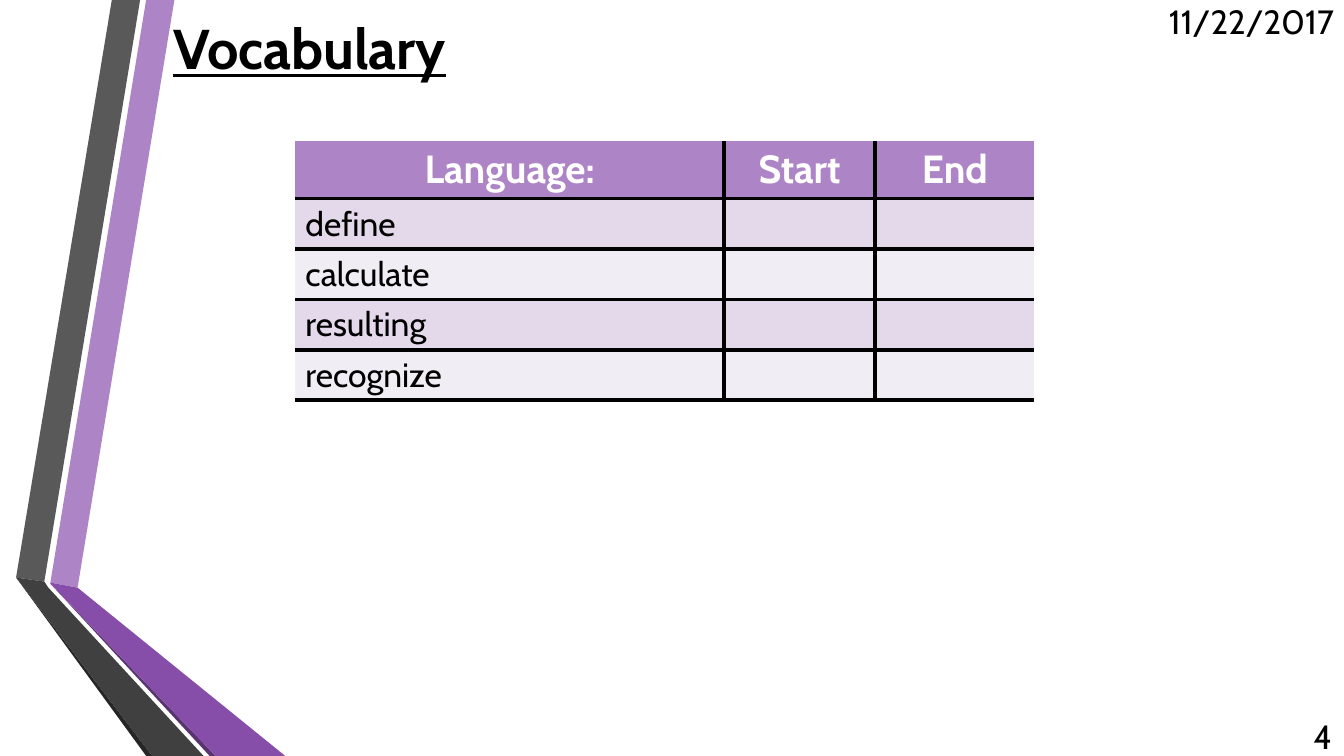
from lxml import etree
from pptx import Presentation
from pptx.dml.color import RGBColor
from pptx.enum.text import MSO_ANCHOR, PP_ALIGN
from pptx.oxml.ns import qn
from pptx.util import Inches, Pt

LEFT, CENTER, RIGHT = PP_ALIGN.LEFT, PP_ALIGN.CENTER, PP_ALIGN.RIGHT
TOP, MIDDLE = MSO_ANCHOR.TOP, MSO_ANCHOR.MIDDLE

BLACK = RGBColor(0x00, 0x00, 0x00)
WHITE = RGBColor(0xFF, 0xFF, 0xFF)
LILAC = RGBColor(0xAD, 0x84, 0xC6)
PURPLE = RGBColor(0x87, 0x4E, 0xA9)
DEEP_PURPLE = RGBColor(0x5A, 0x34, 0x71)
GRAY = RGBColor(0x59, 0x59, 0x59)
DARK_GRAY = RGBColor(0x40, 0x40, 0x40)
CHARCOAL = RGBColor(0x26, 0x26, 0x26)
BAND_DARK = RGBColor(0xE3, 0xD9, 0xEA)
BAND_LIGHT = RGBColor(0xF1, 0xED, 0xF5)


def write(frame, text, size, color, align, bold=False, underline=False):
    para = frame.paragraphs[0]
    para.alignment = align
    span = para.add_run()
    span.text = text
    span.font.name = "Cabin"
    span.font.size = Pt(size)
    span.font.color.rgb = color
    span.font.bold = bold
    span.font.underline = underline


def set_border(cell, side, shown):
    line = etree.SubElement(cell._tc.get_or_add_tcPr(), qn("a:ln" + side))
    if shown:
        line.set("w", str(Pt(3)))
        fill = etree.SubElement(line, qn("a:solidFill"))
        etree.SubElement(fill, qn("a:srgbClr")).set("val", str(BLACK))
    else:
        etree.SubElement(line, qn("a:noFill"))


deck = Presentation()
deck.slide_width = Inches(13.33)
deck.slide_height = Inches(7.5)
page = deck.slides.add_slide(deck.slide_layouts[6])

ribbons = [
    (LILAC, [(0.5, 5.78), (0.77, 5.83), (1.73, 0), (1.45, 0)]),
    (GRAY, [(1.39, 0), (1.11, 0), (0.16, 5.73), (0.44, 5.77)]),
    (CHARCOAL, [(0.16, 5.73), (1.45, 7.5), (1.51, 7.5)]),
    (DEEP_PURPLE, [(0.5, 5.79), (2.08, 7.5), (2.14, 7.5)]),
    (PURPLE, [(0.5, 5.79), (2.14, 7.5), (2.83, 7.5), (0.77, 5.83), (0.5, 5.78)]),
    (DARK_GRAY, [(2.02, 7.5), (0.48, 5.83), (0.44, 5.77), (0.16, 5.73), (1.51, 7.5)]),
]
for color, corners in ribbons:
    points = [(Inches(x), Inches(y)) for x, y in corners]
    builder = page.shapes.build_freeform(*points[0], scale=1.0)
    builder.add_line_segments(points[1:], close=True)
    ribbon = builder.convert_to_shape()
    ribbon.fill.solid()
    ribbon.fill.fore_color.rgb = color
    ribbon.line.fill.background()
    ribbon.shadow.inherit = False

labels = [
    ("Vocabulary", 1.62, 0.01, 10.96, 0.92, 40, LEFT, True),
    ("11/22/2017", 11.29, 0.01, 2.04, 0.4, 24, RIGHT, False),
    ("4", 12.58, 7.1, 0.73, 0.4, 24, RIGHT, False),
]
for text, left, top, width, height, size, align, is_title in labels:
    box = page.shapes.add_textbox(Inches(left), Inches(top), Inches(width), Inches(height))
    box.text_frame.word_wrap = True
    box.text_frame.vertical_anchor = MIDDLE
    write(box.text_frame, text, size, BLACK, align, bold=is_title, underline=is_title)

rows = [
    ["Language:", "Start", "End"],
    ["define", "", ""],
    ["calculate", "", ""],
    ["resulting", "", ""],
    ["recognize", "", ""],
]
column_widths = [4.25, 1.5, 1.58]
last_column = len(column_widths) - 1
table = page.shapes.add_table(
    len(rows), len(column_widths), Inches(2.93), Inches(1.4), Inches(7.33), Inches(2.57)
).table
for column, width in zip(table.columns, column_widths):
    column.width = Inches(width)

for r, words in enumerate(rows):
    is_header = r == 0
    table.rows[r].height = Inches(0.57 if is_header else 0.5)
    band = LILAC if is_header else BAND_DARK if r % 2 else BAND_LIGHT
    for c, word in enumerate(words):
        cell = table.cell(r, c)
        set_border(cell, "L", c > 0)
        set_border(cell, "R", c < last_column)
        set_border(cell, "T", not is_header)
        set_border(cell, "B", True)
        cell.fill.solid()
        cell.fill.fore_color.rgb = band
        cell.vertical_anchor = MIDDLE if is_header else TOP
        if is_header:
            write(cell.text_frame, word, 28, WHITE, CENTER, bold=True)
        elif word:
            write(cell.text_frame, word, 24, BLACK, LEFT)

deck.save("out.pptx")
